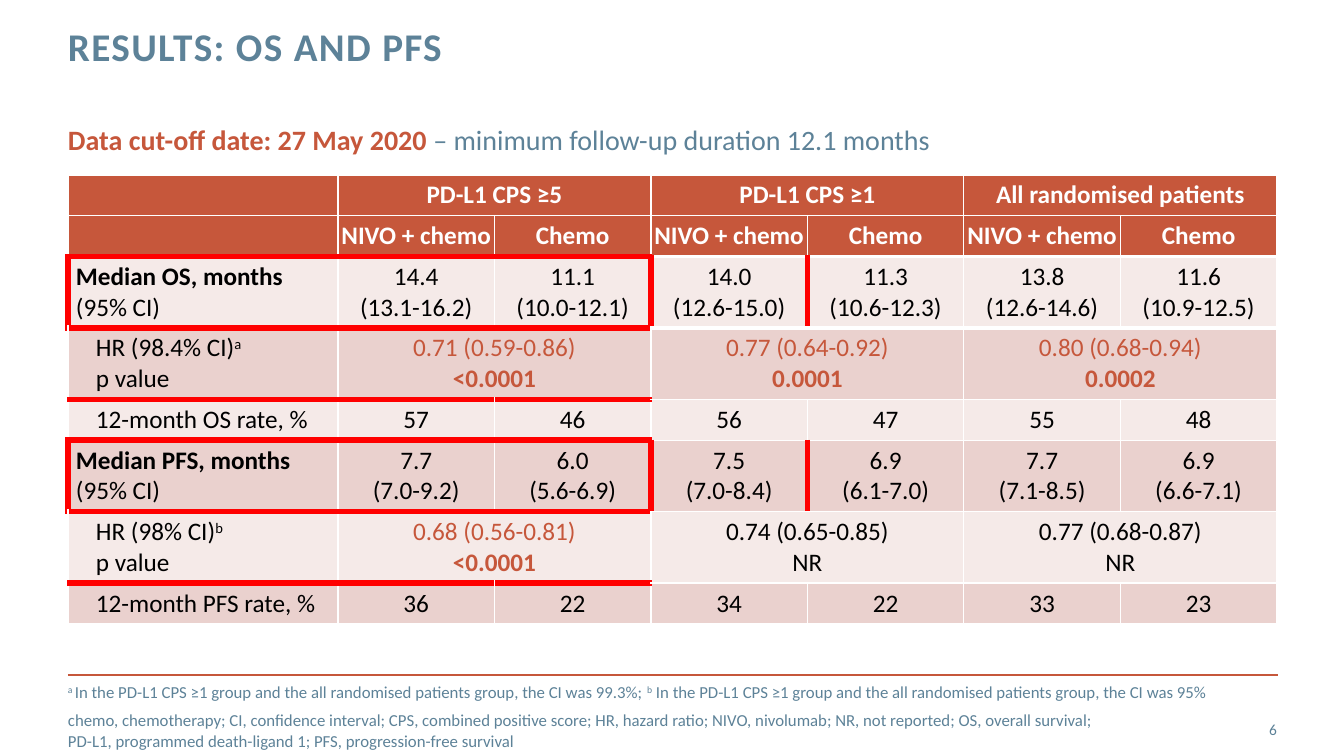
import pptx
import pptx.util
from collections import defaultdict
from dataclasses import dataclass
from lxml import etree
from pptx.dml.color import RGBColor
from pptx.enum.shapes import MSO_CONNECTOR
from pptx.enum.text import MSO_ANCHOR, MSO_AUTO_SIZE, PP_ALIGN
from pptx.oxml.ns import qn
from pptx.util import Pt

TITLE = "RESULTS: OS AND PFS"
CUTOFF = "Data cut-off date: 27 May 2020 "
FOLLOW_UP = "– minimum follow-up duration 12.1 months"
PAGE_NUMBER = "6"
GROUPS = ["PD-L1 CPS ≥5", "PD-L1 CPS ≥1", "All randomised patients"]
ARMS = ["NIVO + chemo", "Chemo"]
# kind of row, label, superscript mark, values (per arm, or per group for hazard ratios)
RESULTS = [
    ("median", "Median OS, months\n(95% CI)", "",
     ["14.4\n(13.1-16.2)", "11.1\n(10.0-12.1)", "14.0\n(12.6-15.0)",
      "11.3\n(10.6-12.3)", "13.8\n(12.6-14.6)", "11.6\n(10.9-12.5)"]),
    ("hazard", "HR (98.4% CI)\np value", "a",
     ["0.71 (0.59-0.86)\n<0.0001", "0.77 (0.64-0.92)\n0.0001", "0.80 (0.68-0.94)\n0.0002"]),
    ("rate", "12-month OS rate, %", "", ["57", "46", "56", "47", "55", "48"]),
    ("median", "Median PFS, months\n(95% CI)", "",
     ["7.7\n(7.0-9.2)", "6.0\n(5.6-6.9)", "7.5\n(7.0-8.4)",
      "6.9\n(6.1-7.0)", "7.7\n(7.1-8.5)", "6.9\n(6.6-7.1)"]),
    ("hazard", "HR (98% CI)\np value", "b",
     ["0.68 (0.56-0.81)\n<0.0001", "0.74 (0.65-0.85)\nNR", "0.77 (0.68-0.87)\nNR"]),
    ("rate", "12-month PFS rate, %", "", ["36", "22", "34", "22", "33", "23"]),
]
# text and whether it is superscript
NOTES = [
    ("a ", True),
    ("In the PD-L1 CPS ≥1 group and the all randomised patients group, the CI was 99.3%; ", False),
    ("b", True),
    (" In the PD-L1 CPS ≥1 group and the all randomised patients group, the CI was 95%", False),
]
ABBREVIATIONS = [
    "chemo, chemotherapy; CI, confidence interval; CPS, combined positive score; HR, hazard ratio; "
    "NIVO, nivolumab; NR, not reported; OS, overall survival; ",
    "PD-L1, programmed death-ligand 1; PFS, progression-free survival",
]


@dataclass(frozen=True)
class Theme:
    font: str = "Calibri"
    slate: str = "5D8298"
    accent: str = "C6573B"
    light: str = "F5EAE8"
    dark: str = "EAD1CE"
    black: str = "000000"
    white: str = "FFFFFF"
    red: str = "FF0000"
    title: int = 28
    subtitle: int = 20
    cell: int = 18
    note: int = 12
    number: int = 11


THEME = Theme()
EMU_PER_PX = 914400 / 100.8
LEFT, RIGHT = 68, 1277
TABLE_TOP, LABEL_WIDTH = 175, 270
ONE_LINE, TWO_LINES = 40, 70
HEADER_ROWS, BOXED_COLUMNS = 2, 3


def px(length):
    return round(length * EMU_PER_PX)


def style(span, size, color, bold=False, raised=False):
    span.font.name = THEME.font
    span.font.size = Pt(size)
    span.font.bold = bold
    span.font.color.rgb = RGBColor.from_string(color)
    if raised:
        span.font._element.set("baseline", "30000")


def add_span(para, text, *look):
    span = para.add_run()
    span.text = text
    style(span, *look)
    return span


def place(shape, left, top, width, height, anchor=MSO_ANCHOR.TOP, inset=0):
    """Position a text shape and give its frame side margins of 0 and the inset above and below."""
    shape.left, shape.top, shape.width, shape.height = map(px, (left, top, width, height))
    frame = shape.text_frame
    frame.word_wrap, frame.auto_size, frame.vertical_anchor = True, MSO_AUTO_SIZE.NONE, anchor
    frame.margin_left = frame.margin_right = 0
    frame.margin_top = frame.margin_bottom = px(inset)
    return frame


def fill_cell(cell, text, fill, color=THEME.black, bold_lines=(), centred=True, indent=0):
    cell.fill.solid()
    cell.fill.fore_color.rgb = RGBColor.from_string(fill)
    cell.margin_left, cell.margin_right = px(2 if centred else 8), px(2)
    cell.margin_top = cell.margin_bottom = px(5)
    cell.text_frame.text = text
    for line, para in enumerate(cell.text_frame.paragraphs):
        para.alignment = PP_ALIGN.CENTER if centred else PP_ALIGN.LEFT
        if indent:
            para._p.get_or_add_pPr().set("marL", str(px(indent)))
        for span in para.runs:
            style(span, THEME.cell, color, line in bold_lines)


def draw_edges(table, edges):
    for (row, column), sides in edges.items():
        properties = table.cell(row, column)._tc.get_or_add_tcPr()
        for index, side in enumerate(s for s in "LRTB" if s in sides):
            color, width = sides[side]
            line = etree.Element(qn(f"a:ln{side}"), w=str(Pt(width)))
            solid = etree.SubElement(line, qn("a:solidFill"))
            etree.SubElement(solid, qn("a:srgbClr"), val=color)
            properties.insert(index, line)


def result_edges():
    """Red frames around the medians of the first group, and a thick rule under the header."""
    edges = defaultdict(dict)
    red, thick_white = (THEME.red, 4.5), (THEME.white, 3)
    for column in range(BOXED_COLUMNS, 1 + len(GROUPS) * len(ARMS)):
        edges[HEADER_ROWS - 1, column]["B"] = thick_white
        edges[HEADER_ROWS, column]["T"] = thick_white
    for row, (kind, *_) in enumerate(RESULTS, HEADER_ROWS):
        if kind != "median":
            continue
        for column in range(BOXED_COLUMNS):
            edges[row - 1, column]["B"] = red
            for framed in (row, row + 1):
                edges[framed, column].update(T=red, B=red)
        edges[row, 0]["L"] = red
        edges[row, BOXED_COLUMNS - 1]["R"] = red
        edges[row, BOXED_COLUMNS].update(L=red, R=red)
    return edges


def add_results_table(slide):
    columns = 1 + len(GROUPS) * len(ARMS)
    heights = [ONE_LINE] * HEADER_ROWS + [ONE_LINE if r[0] == "rate" else TWO_LINES for r in RESULTS]
    table = slide.shapes.add_table(len(heights), columns, px(LEFT), px(TABLE_TOP),
                                   px(RIGHT - LEFT), px(sum(heights))).table
    table.first_row = table.horz_banding = False
    for row, height in zip(table.rows, heights):
        row.height = px(height)
    for index, column in enumerate(table.columns):
        column.width = px((RIGHT - LEFT - LABEL_WIDTH) / (columns - 1) if index else LABEL_WIDTH)

    for row, texts in enumerate((GROUPS, ARMS * len(GROUPS))):
        fill_cell(table.cell(row, 0), "", THEME.accent)
        step = (columns - 1) // len(texts)
        for index, text in enumerate(texts):
            cell = table.cell(row, 1 + index * step)
            if step > 1:
                cell.merge(table.cell(row, index * step + step))
            fill_cell(cell, text, THEME.accent, THEME.white, (0,))

    for row, (kind, label, mark, values) in enumerate(RESULTS, HEADER_ROWS):
        fill = THEME.dark if row % 2 else THEME.light
        label_cell = table.cell(row, 0)
        fill_cell(label_cell, label, fill, bold_lines=(0,) if kind == "median" else (),
                  centred=False, indent=0 if kind == "median" else 20)
        if mark:
            add_span(label_cell.text_frame.paragraphs[0], mark, THEME.cell, THEME.black, False, True)
        step = (columns - 1) // len(values)
        for index, value in enumerate(values):
            cell = table.cell(row, 1 + index * step)
            if step > 1:
                cell.merge(table.cell(row, index * step + step))
            tested = kind == "hazard" and not value.endswith("NR")
            fill_cell(cell, value, fill, THEME.accent if tested else THEME.black, (1,) if tested else ())
    draw_edges(table, result_edges())


def add_footnotes(frame):
    notes = frame.paragraphs[0]
    for text, raised in NOTES:
        add_span(notes, text, THEME.note, THEME.slate, False, raised)
    abbreviations = frame.add_paragraph()
    for index, text in enumerate(ABBREVIATIONS):
        if index:
            abbreviations.add_line_break()
            etree.SubElement(abbreviations._p[-1], qn("a:rPr"), sz=str(THEME.note * 100))
        add_span(abbreviations, text, THEME.note, THEME.slate)
    notes.space_before, abbreviations.space_before = Pt(0), Pt(6)


def main():
    deck = pptx.Presentation()
    deck.slide_width, deck.slide_height = px(1344), px(756)
    slide = deck.slides.add_slide(deck.slide_layouts.get_by_name("Section Header"))
    title, body = slide.placeholders

    rule = slide.shapes.add_connector(MSO_CONNECTOR.STRAIGHT, px(LEFT), px(675), px(RIGHT + 1), px(675))
    rule.line.color.rgb = RGBColor.from_string(THEME.accent)
    rule.line.width = Pt(2)
    etree.SubElement(rule._element.spPr, qn("a:effectLst"))

    heading = place(title, LEFT, 27, 993, 42).paragraphs[0]
    heading.text = TITLE
    heading.alignment, heading.line_spacing = PP_ALIGN.LEFT, Pt(30)
    style(heading.runs[0], THEME.title, THEME.slate, True)
    heading.runs[0].font._element.set("spc", "100")

    add_footnotes(place(body, LEFT, 696, 1191, 40, MSO_ANCHOR.MIDDLE))

    subtitle = place(slide.shapes.add_textbox(0, 0, 0, 0), LEFT, 117, 1111, 44, inset=5).paragraphs[0]
    add_span(subtitle, CUTOFF, THEME.subtitle, THEME.accent, True)
    add_span(subtitle, FOLLOW_UP, THEME.subtitle, THEME.slate)

    number = place(slide.shapes.add_textbox(0, 0, 0, 0), 1190, 709, 87, 40, MSO_ANCHOR.MIDDLE).paragraphs[0]
    number.alignment = PP_ALIGN.RIGHT
    add_span(number, PAGE_NUMBER, THEME.number, THEME.slate)

    add_results_table(slide)
    deck.save("out.pptx")


if __name__ == "__main__":
    main()
